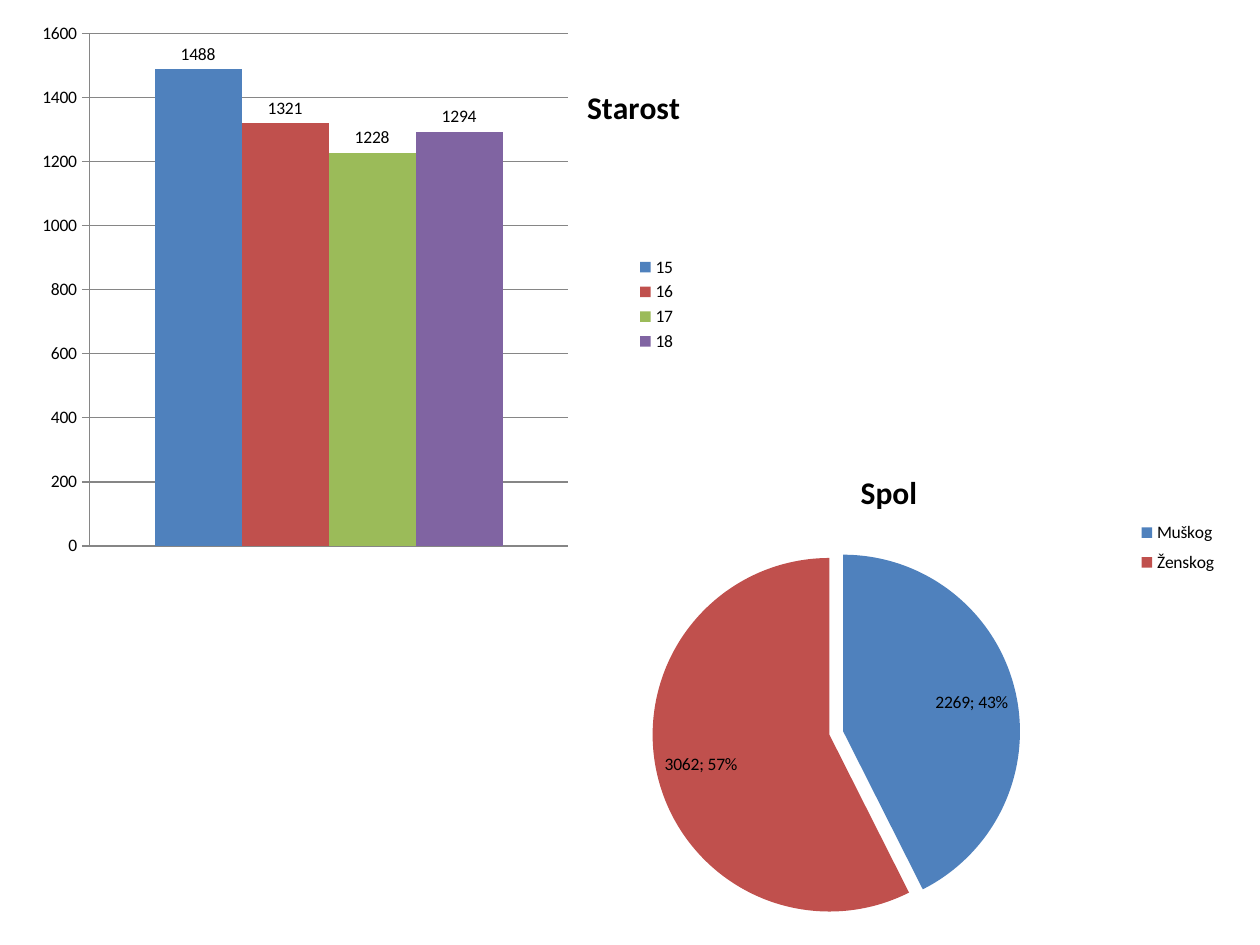
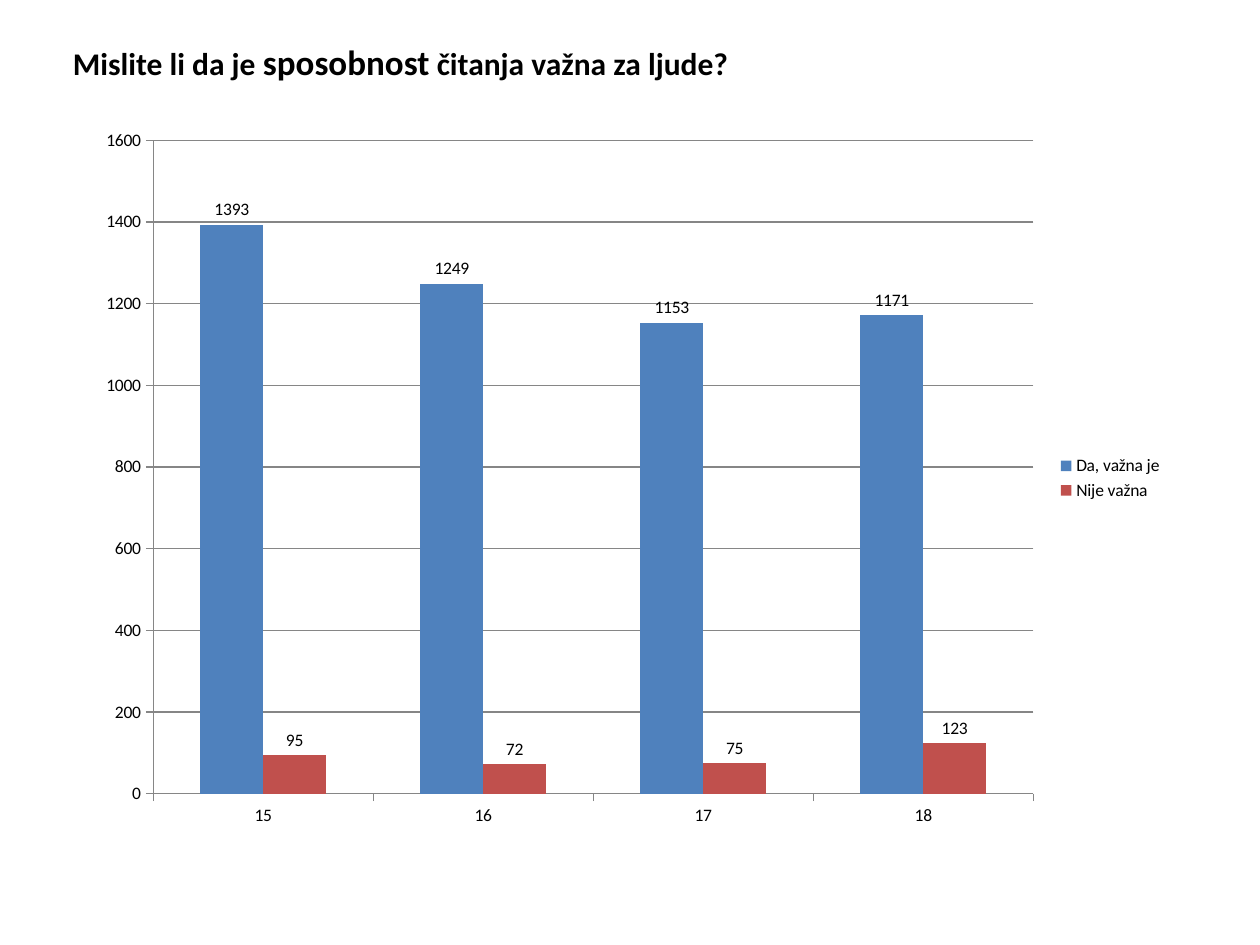
from lxml import etree
from pptx import Presentation
from pptx.chart.data import CategoryChartData
from pptx.dml.color import RGBColor
from pptx.enum.chart import XL_CHART_TYPE, XL_LABEL_POSITION, XL_LEGEND_POSITION, XL_TICK_MARK
from pptx.enum.text import MSO_ANCHOR, PP_ALIGN
from pptx.oxml.ns import qn
from pptx.util import Inches, Pt

COLUMNS = XL_CHART_TYPE.COLUMN_CLUSTERED
PIE = XL_CHART_TYPE.PIE
OUTSIDE_END = XL_LABEL_POSITION.OUTSIDE_END
INSIDE_END = XL_LABEL_POSITION.INSIDE_END
LEGEND_RIGHT = XL_LEGEND_POSITION.RIGHT
TICK_OUT = XL_TICK_MARK.OUTSIDE
TICK_NONE = XL_TICK_MARK.NONE

FONT = "Calibri"
BLACK = RGBColor(0x00, 0x00, 0x00)
GREY = RGBColor(0x86, 0x86, 0x86)
BLUE = RGBColor(0x4F, 0x81, 0xBD)
RED = RGBColor(0xC0, 0x50, 0x4D)
GREEN = RGBColor(0x9B, 0xBB, 0x59)
PURPLE = RGBColor(0x80, 0x64, 0xA2)
PALETTE = [BLUE, RED, GREEN, PURPLE]
AGES = ["15", "16", "17", "18"]


def add_survey_chart(slide, kind, box, categories, answers, title=None):
    data = CategoryChartData()
    data.categories = categories
    for name, values in answers:
        data.add_series(name, values)
    chart = slide.shapes.add_chart(kind, *map(Inches, box), data).chart
    chart.font.name = FONT
    chart.font.size = Pt(10)
    chart.font.color.rgb = BLACK
    chart.has_legend = True
    chart.legend.position = LEGEND_RIGHT
    chart.legend.include_in_layout = False
    chart.has_title = title is not None
    if title:
        heading = chart.chart_title.text_frame
        heading.text = title
        font = heading.paragraphs[0].font
        font.name, font.size, font.bold = FONT, Pt(18), True
        font.color.rgb = BLACK

    plot = chart.plots[0]
    plot.has_data_labels = True
    plot.data_labels.show_value = True
    if kind == PIE:
        plot.vary_by_categories = True
        return chart

    plot.vary_by_categories = False
    plot.gap_width = 150
    plot.overlap = 0
    plot.data_labels.position = OUTSIDE_END
    for series, color in zip(plot.series, PALETTE):
        series.format.fill.solid()
        series.format.fill.fore_color.rgb = color
        series.invert_if_negative = False
    for axis in (chart.category_axis, chart.value_axis):
        axis.major_tick_mark = TICK_OUT
        axis.minor_tick_mark = TICK_NONE
        axis.format.line.color.rgb = GREY
    chart.value_axis.has_major_gridlines = True
    chart.value_axis.major_gridlines.format.line.color.rgb = GREY
    return chart


def set_layout(part, **fractions):
    for old in part.findall(qn("c:layout")):
        part.remove(old)
    layout = etree.Element(qn("c:layout"))
    manual = etree.SubElement(layout, qn("c:manualLayout"))
    if part.tag == qn("c:plotArea"):
        etree.SubElement(manual, qn("c:layoutTarget")).set("val", "inner")
        part.insert(0, layout)
    else:
        part.find(qn("c:overlay")).addprevious(layout)
    for mode in ("xMode", "yMode"):
        etree.SubElement(manual, qn(f"c:{mode}")).set("val", "edge")
    for key, value in fractions.items():
        etree.SubElement(manual, qn(f"c:{key}")).set("val", str(value))


prs = Presentation()
prs.slide_width = Inches(10)
prs.slide_height = Inches(7.5)
TITLE_ONLY = prs.slide_layouts[5]
BLANK = prs.slide_layouts[6]

respondents = prs.slides.add_slide(BLANK)
age_counts = [(age, [count]) for age, count in zip(AGES, [1488, 1321, 1228, 1294])]
age_chart = add_survey_chart(
    respondents, COLUMNS, (0.12, 0.13, 5.35, 4.57), ["1"], age_counts, "Starost")
age_chart.category_axis.visible = False
age_title = age_chart.chart_title._element
age_title.find(qn("c:overlay")).set("val", "1")
set_layout(age_title, x=0.84, y=0.11)
set_layout(age_chart._chartSpace.find(".//" + qn("c:plotArea")),
           x=0.11, y=0.03, w=0.71, h=0.89)

gender_chart = add_survey_chart(
    respondents, PIE, (3.58, 3.56, 6.95, 3.93), ["Muškog", "Ženskog"],
    [("Series 1", [2269, 3062])], "Spol")
set_layout(gender_chart._chartSpace.find(".//" + qn("c:plotArea")),
           x=0.23, y=0.2, w=0.42, h=0.75)
set_layout(gender_chart.legend._element, x=0.77, y=0.13, w=0.12, h=0.14)
gender_plot = gender_chart.plots[0]
gender_series = gender_plot.series[0]
for index, color in enumerate([BLUE, RED]):
    fill = gender_series.points[index].format.fill
    fill.solid()
    fill.fore_color.rgb = color
explosion = etree.Element(qn("c:explosion"))
explosion.set("val", "4")
gender_series._element.find(qn("c:dPt")).addprevious(explosion)
for point in gender_series._element.findall(qn("c:dPt")):
    point_explosion = etree.Element(qn("c:explosion"))
    point_explosion.set("val", "4")
    point.find(qn("c:spPr")).addprevious(point_explosion)
gender_labels = gender_plot.data_labels
gender_labels.show_percentage = True
gender_labels.position = INSIDE_END
separator = etree.Element(qn("c:separator"))
separator.text = "; "
label_flags = gender_labels._element
last_flag = label_flags.find(qn("c:showBubbleSize"))
if last_flag is None:
    last_flag = label_flags.find(qn("c:showPercent"))
last_flag.addnext(separator)

importance = prs.slides.add_slide(TITLE_ONLY)
add_survey_chart(
    importance, COLUMNS, (0.67, 0.92, 8.66, 5.75), AGES,
    [("Da, važna je", [1393, 1249, 1153, 1171]), ("Nije važna", [95, 72, 75, 123])])

question = importance.shapes.title
question.left, question.top = Inches(0.26), Inches(0.27)
question.width, question.height = Inches(5.84), Inches(0.44)
question.text_frame.word_wrap = True
question.text_frame.vertical_anchor = MSO_ANCHOR.TOP
wording = question.text_frame.paragraphs[0]
wording.alignment = PP_ALIGN.CENTER
wording.font.name = FONT
wording.font.bold = True
wording.font.color.rgb = BLACK
for text, size in [("Mislite li da je ", 18), ("sposobnost", 20),
                   (" čitanja važna za ljude?", 18)]:
    run = wording.add_run()
    run.text = text
    run.font.size = Pt(size)

prs.save("out.pptx")
